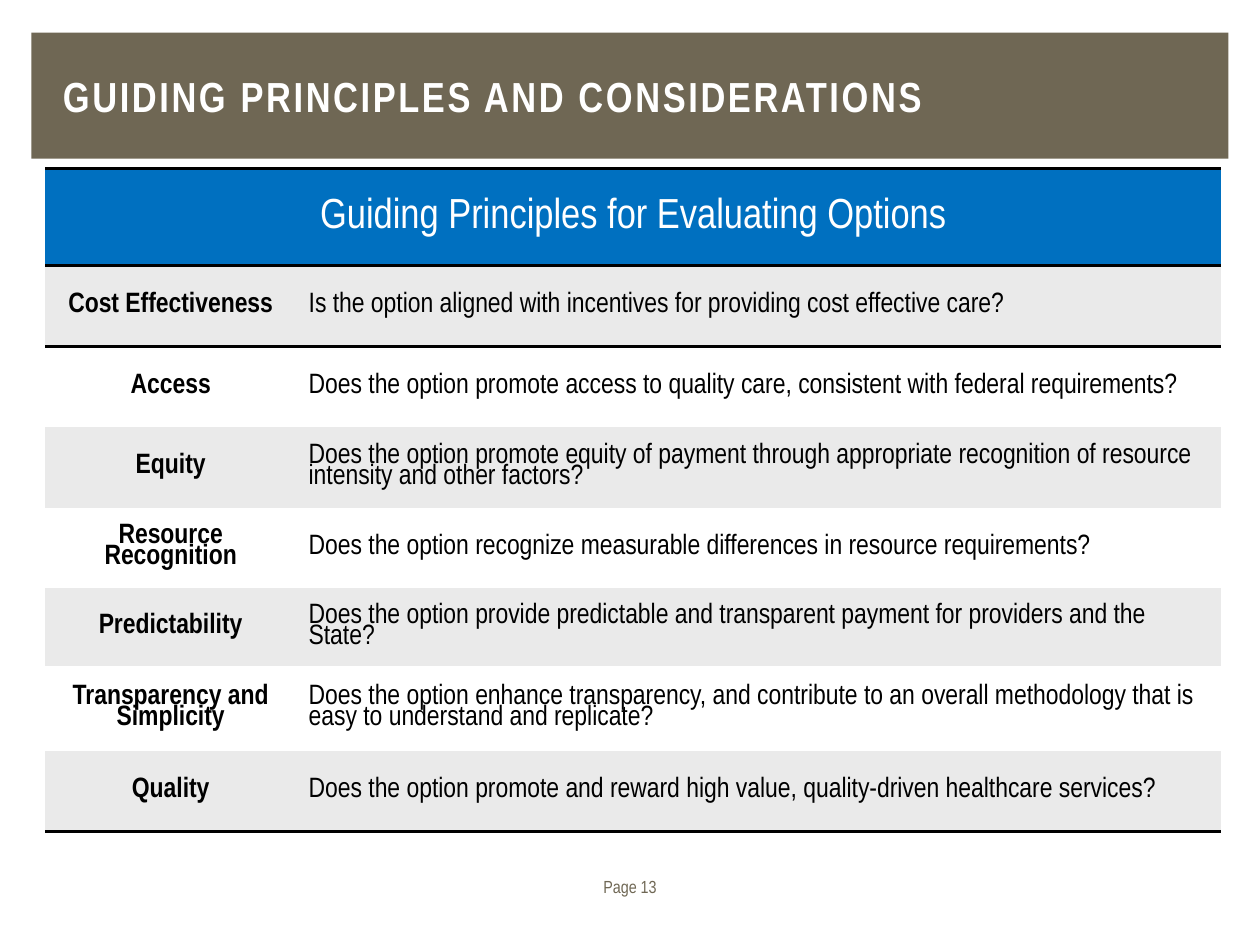
import pptx
import pptx.dml.color
import pptx.enum.shapes
import pptx.enum.text
import pptx.oxml
import pptx.oxml.ns
import pptx.util

Inches = pptx.util.Inches
ALIGN = pptx.enum.text.PP_ALIGN
ANCHOR = pptx.enum.text.MSO_ANCHOR


def color(hex_string):
    return pptx.dml.color.RGBColor.from_string(hex_string)


def write(frame, text, size, hex_string, bold=False, align=ALIGN.LEFT, spacing=None):
    frame.word_wrap = True
    paragraph = frame.paragraphs[0]
    paragraph.text = text
    paragraph.alignment = align
    paragraph.line_spacing = spacing
    paragraph.font.name = "Arial Narrow"
    paragraph.font.size = pptx.util.Pt(size)
    paragraph.font.bold = bold
    paragraph.font.color.rgb = color(hex_string)
    return paragraph


presentation = pptx.Presentation()
presentation.slide_width = Inches(10)
presentation.slide_height = Inches(7.5)
slide = presentation.slides.add_slide(presentation.slide_layouts[6])

banner = slide.shapes.add_shape(
    pptx.enum.shapes.MSO_SHAPE.RECTANGLE, Inches(0.25), Inches(0.26), Inches(9.5), Inches(1)
)
banner.shadow.inherit = False
banner.fill.solid()
banner.fill.fore_color.rgb = color("6F6754")
banner.line.fill.background()

title = slide.shapes.add_textbox(Inches(0.5), Inches(0.25), Inches(9.5), Inches(1.02)).text_frame
title.margin_left = title.margin_right = title.margin_top = title.margin_bottom = 0
title.vertical_anchor = ANCHOR.MIDDLE
paragraph = write(title, "GUIDING PRINCIPLES AND CONSIDERATIONS", 24, "FFFFFF", bold=True)
paragraph.runs[0].font._element.set("spc", "150")

footer = slide.shapes.add_textbox(0, Inches(6.9), Inches(10), Inches(0.27)).text_frame
footer.vertical_anchor = ANCHOR.BOTTOM
write(footer, "Page 13", 10, "6F6754", align=ALIGN.CENTER)

principles = [
    ("Cost Effectiveness", "Is the option aligned with incentives for providing cost effective care?"),
    ("Access", "Does the option promote access to quality care, consistent with federal requirements?"),
    ("Equity", "Does the option promote equity of payment through appropriate recognition of resource "
               "intensity and other factors?"),
    ("Resource Recognition", "Does the option recognize measurable differences in resource requirements?"),
    ("Predictability", "Does the option provide predictable and transparent payment for providers and the State?"),
    ("Transparency and Simplicity", "Does the option enhance transparency, and contribute to an overall "
                                    "methodology that is easy to understand and replicate?"),
    ("Quality", "Does the option promote and reward high value, quality-driven healthcare services?"),
]
row_heights = [0.77, 0.64, 0.64, 0.64, 0.64, 0.62, 0.67, 0.64]

table = slide.shapes.add_table(
    len(row_heights), 2, Inches(0.36), Inches(1.34), Inches(9.33), Inches(sum(row_heights))
).table
table.first_row = table.horz_banding = False
style_id = table._tbl.tblPr.find(pptx.oxml.ns.qn("a:tableStyleId"))
style_id.text = "{2D5ABB26-0587-4C30-8999-92F81FD0307C}"
for column, width in zip(table.columns, (1.99, 7.34)):
    column.width = Inches(width)
for row, height in zip(table.rows, row_heights):
    row.height = Inches(height)

header = table.cell(0, 0)
header.merge(table.cell(0, 1))
write(header.text_frame, "Guiding Principles for Evaluating Options", 24, "FFFFFF",
      align=ALIGN.CENTER, spacing=0.9)
for index, (principle, question) in enumerate(principles, start=1):
    write(table.cell(index, 0).text_frame, principle, 16, "000000", True, ALIGN.CENTER, 0.8)
    write(table.cell(index, 1).text_frame, question, 16, "000000", spacing=0.8)

row_borders = {0: ("lnT", "lnB"), 1: ("lnT",), len(principles): ("lnB",)}
for index in range(len(row_heights)):
    fill = "0070C0" if index == 0 else "EAEAEA" if index % 2 else "FFFFFF"
    for cell in table.rows[index].cells:
        cell.vertical_anchor = ANCHOR.MIDDLE
        cell.fill.solid()
        cell.fill.fore_color.rgb = color(fill)
        for position, side in enumerate(row_borders.get(index, ())):
            border = pptx.oxml.parse_xml(
                f'<a:{side} {pptx.oxml.ns.nsdecls("a")} w="{pptx.util.Pt(2)}">'
                f'<a:solidFill><a:srgbClr val="000000"/></a:solidFill></a:{side}>'
            )
            cell._tc.get_or_add_tcPr().insert(position, border)

presentation.save("out.pptx")
